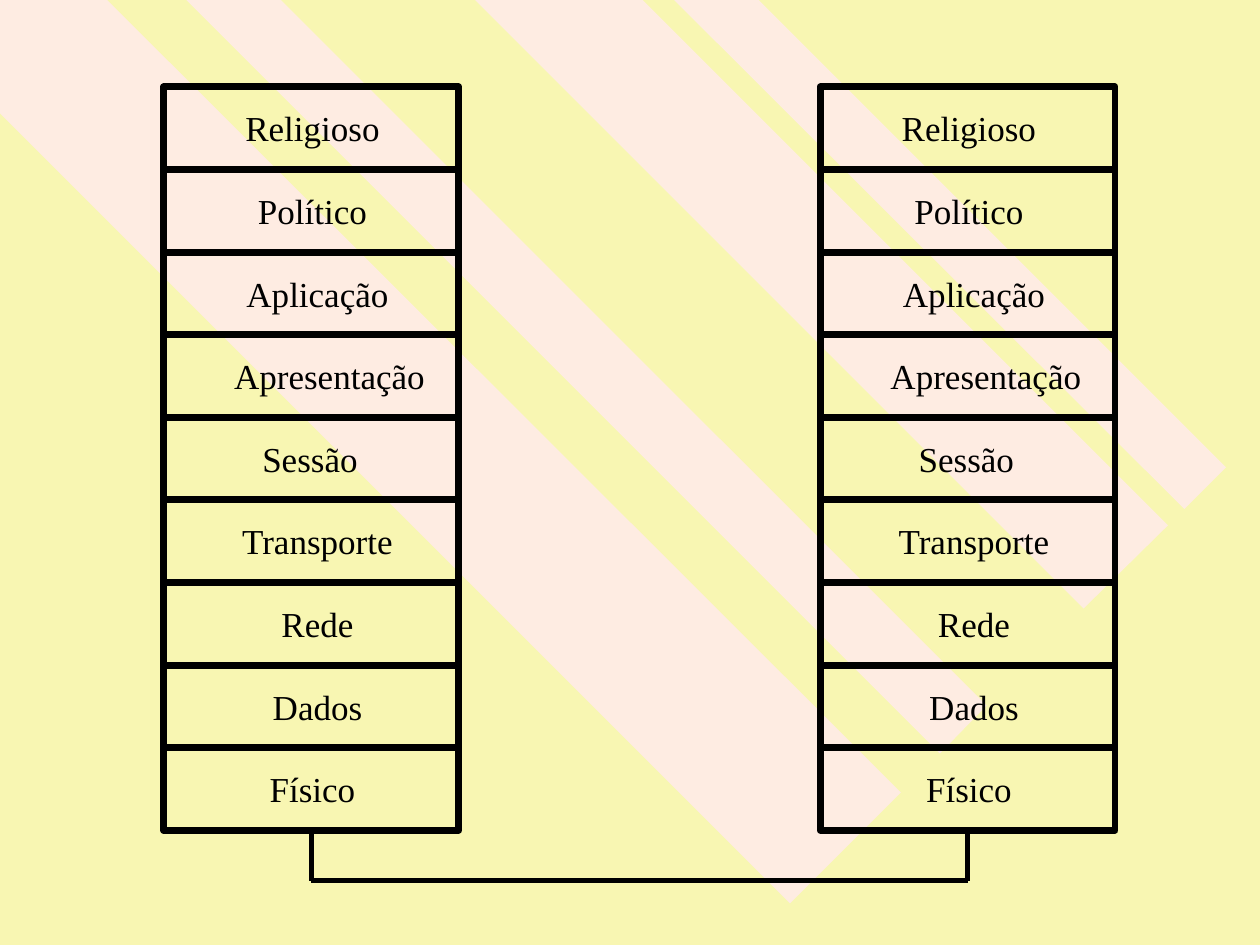
from pptx import Presentation
from pptx.dml.color import RGBColor
from pptx.enum.shapes import MSO_CONNECTOR as Connector, MSO_SHAPE as Preset
from pptx.enum.text import MSO_AUTO_SIZE as AutoSize, PP_ALIGN as Align
from pptx.oxml.ns import qn
from pptx.util import Inches, Pt
from lxml.etree import SubElement

COLORS = {"background": "F8F6B2", "stripe": "FEECE2", "ink": "000000"}
STRIPES = [
    [(7.15, 6.29), (0.85, 0), (0, 0), (0, 0.9), (6.27, 7.17)],
    [(2.23, 0), (7.83, 5.6), (7.46, 5.98), (1.48, 0)],
    [(5.1, 0), (9.27, 4.17), (8.6, 4.83), (3.77, 0)],
    [(5.35, 0), (9.4, 4.04), (9.73, 3.71), (6.02, 0)],
]
LABEL_WIDTH = 1.42
LAYERS = [
    ("Religioso", 0.47, LABEL_WIDTH),
    ("Político", 0.47, LABEL_WIDTH),
    ("Aplicação", 0.51, LABEL_WIDTH),
    ("Apresentação", 0.45, 1.73),
    ("Sessão", 0.45, LABEL_WIDTH),
    ("Transporte", 0.51, LABEL_WIDTH),
    ("Rede", 0.51, LABEL_WIDTH),
    ("Dados", 0.51, LABEL_WIDTH),
    ("Físico", 0.47, LABEL_WIDTH),
]
STACK_TOP, STACK_WIDTH, STACK_HEIGHT = 0.69, 2.34, 5.9
CABLE_Y = 6.99


def color(name):
    return RGBColor.from_string(COLORS[name])


def add_background(slide):
    fill = slide.background.fill
    fill.solid()
    fill.fore_color.rgb = color("background")
    group = slide.shapes.add_group_shape()
    for points in STRIPES:
        start, *rest = [(Inches(x), Inches(y)) for x, y in points]
        builder = group.shapes.build_freeform(*start)
        builder.add_line_segments(rest, close=True)
        stripe = builder.convert_to_shape()
        stripe.shadow.inherit = False
        stripe.fill.solid()
        stripe.fill.fore_color.rgb = color("stripe")
        stripe.line.fill.background()


def add_layer_box(slide, left, top, width, height):
    box = slide.shapes.add_shape(
        Preset.RECTANGLE, Inches(left), Inches(top), Inches(width), Inches(height))
    box.shadow.inherit = False
    box.fill.background()
    box.line.color.rgb = color("ink")
    box.line.width = Pt(4)
    return box


def add_label(slide, text, left, top, width, height):
    label = slide.shapes.add_textbox(
        Inches(left), Inches(top), Inches(width), Inches(height))
    text_frame = label.text_frame
    text_frame.word_wrap = True
    text_frame.auto_size = AutoSize.SHAPE_TO_FIT_TEXT
    text_frame.text = text
    paragraph = text_frame.paragraphs[0]
    paragraph.alignment = Align.CENTER
    font = paragraph.runs[0].font
    font.name = "Times New Roman"
    font.size = Pt(20)
    font.color.rgb = color("ink")


def add_stack(slide, left, top, width, height):
    row = height / len(LAYERS)
    for index, (name, indent, label_width) in enumerate(LAYERS):
        y = top + index * row
        box = add_layer_box(slide, left, y, width, row)
        add_label(slide, name, left + indent, y + row / 6, label_width, row * 2 / 3)
    return box


def add_line(slide, start, end):
    line = slide.shapes.add_connector(Connector.STRAIGHT, *start, *end)
    line.line.color.rgb = color("ink")
    line.line.width = Pt(3)
    SubElement(line._element.spPr, qn("a:effectLst"))
    return line


def add_cable(slide, boxes, y):
    ends = []
    for box in boxes:
        x = box.left + box.width // 2
        corner = (x, y)
        drop = add_line(slide, (x, box.top + box.height), corner)
        drop.begin_connect(box, 2)
        ends.append(corner)
    add_line(slide, *ends)


def main():
    presentation = Presentation()
    presentation.slide_width, presentation.slide_height = Inches(10), Inches(7.5)
    slide = presentation.slides.add_slide(presentation.slide_layouts[6])
    add_background(slide)
    physical_boxes = [
        add_stack(slide, left, STACK_TOP, STACK_WIDTH, STACK_HEIGHT)
        for left in (1.3, 6.51)
    ]
    add_cable(slide, physical_boxes, Inches(CABLE_Y))
    presentation.save("out.pptx")


if __name__ == "__main__":
    main()
